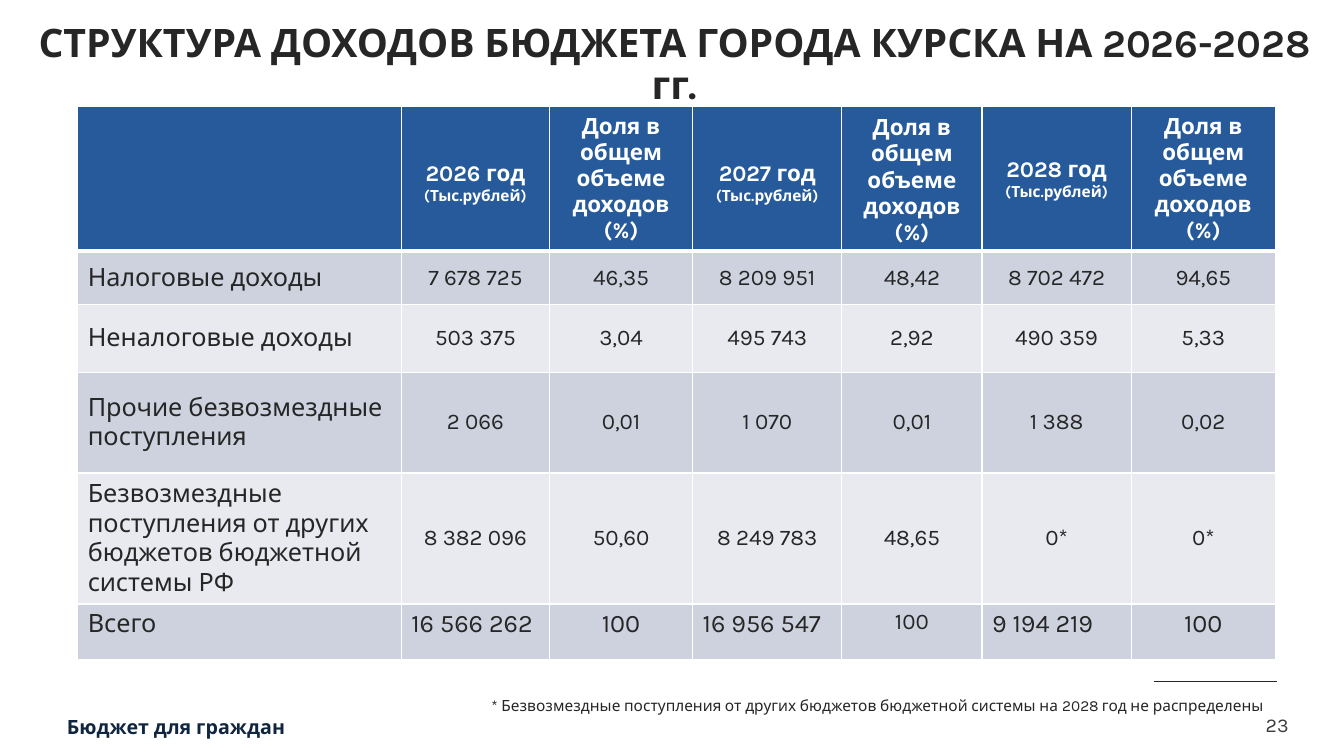
from lxml import etree
from pptx import Presentation
from pptx import util as u
from pptx.dml.color import RGBColor
from pptx.enum import shapes, text
from pptx.oxml import ns

FONT = "Karla"
INK = RGBColor(0x26, 0x26, 0x26)
NAVY = RGBColor(0x10, 0x25, 0x3F)
GREY = RGBColor(0x3C, 0x3C, 0x3C)
WHITE = RGBColor(0xFF, 0xFF, 0xFF)
HEADER_BLUE = RGBColor(0x26, 0x5A, 0x9A)
BANDS = RGBColor(0xCD, 0xD2, 0xDE), RGBColor(0xE8, 0xEA, 0xEF)

WIDTH, HEIGHT = u.Inches(13.33), u.Inches(7.5)
LEFT, CENTER, RIGHT = text.PP_ALIGN.LEFT, text.PP_ALIGN.CENTER, text.PP_ALIGN.RIGHT
TOP, MIDDLE, BOTTOM = text.MSO_ANCHOR.TOP, text.MSO_ANCHOR.MIDDLE, text.MSO_ANCHOR.BOTTOM

COLUMN_SHARES = [3.21, 1.47, 1.42, 1.48, 1.39, 1.48, 1.43]
ROW_SHARES = [1.15, 0.53, 0.67, 1, 0.91, 0.55]
YEARS = ["2026 год ", "2027 год ", "2028 год "]
UNIT = "(Тыс.рублей)"
SHARE_HEADING = "Доля в общем объеме доходов (%)"
INCOME = [
    ["Налоговые доходы", "7 678 725", "46,35", "8 209 951", "48,42", "8 702 472", "94,65"],
    ["Неналоговые доходы", "503 375", "3,04", "495 743", "2,92", "490 359", "5,33"],
    ["Прочие безвозмездные поступления", "2 066", "0,01", "1 070", "0,01", "1 388", "0,02"],
    ["Безвозмездные поступления от других бюджетов бюджетной системы РФ",
     "8 382 096", "50,60", "8 249 783", "48,65", "0*", "0*"],
]
TOTALS = ["Всего", "16 566 262", "100", "16 956 547", "100", "9 194 219", "100"]


def percent_box(left, top, width, height):
    """Turn percentages of the slide into a box in EMU."""
    return (int(WIDTH * left / 100), int(HEIGHT * top / 100),
            int(WIDTH * width / 100), int(HEIGHT * height / 100))


def write(paragraph, words, size=16, color=INK, bold=False, align=LEFT):
    """Append one formatted run to a paragraph."""
    paragraph.alignment = align
    run = paragraph.add_run()
    run.text = words
    run.font.name, run.font.size = FONT, u.Pt(size)
    run.font.bold, run.font.color.rgb = bold, color


def add_label(slide, box, words, anchor=TOP, inset=True, spacing=None, **style):
    """Place a wrapped line of text in the box."""
    frame = slide.shapes.add_textbox(*box).text_frame
    frame.word_wrap, frame.vertical_anchor = True, anchor
    if not inset:
        frame.margin_left = frame.margin_right = frame.margin_top = frame.margin_bottom = 0
    if spacing:
        frame.paragraphs[0].line_spacing = spacing
    write(frame.paragraphs[0], words, **style)


def paint_cell(cell, fill, top_width=1, bottom_width=1):
    """Fill a cell and rule its four sides in white."""
    cell.fill.solid()
    cell.fill.fore_color.rgb = fill
    properties = cell._tc.get_or_add_tcPr()
    sides = {"lnL": 1, "lnR": 1, "lnT": top_width, "lnB": bottom_width}
    for position, (side, points) in enumerate(sides.items()):
        border = etree.Element(ns.qn("a:" + side), w=str(u.Pt(points)))
        solid = etree.SubElement(border, ns.qn("a:solidFill"))
        etree.SubElement(solid, ns.qn("a:srgbClr"), val=str(WHITE))
        properties.insert(position, border)


def fill_header(cells):
    """Write the year and share headings."""
    for column, cell in enumerate(cells):
        paint_cell(cell, HEADER_BLUE, bottom_width=3)
        if column == 0:
            continue
        cell.vertical_anchor = BOTTOM if column == 4 else MIDDLE
        heading = cell.text_frame.paragraphs[0]
        style = dict(color=WHITE, bold=True, align=CENTER)
        if column % 2 == 0:
            write(heading, SHARE_HEADING, **style)
            continue
        write(heading, YEARS[column // 2], **style)
        write(heading, UNIT, size=11, **style)
        if column < 5:
            cell.margin_top = u.Inches(0.13)


def fill_income(cells, values, band, first):
    """Write one source of income on its band."""
    for column, (cell, value) in enumerate(zip(cells, values)):
        paint_cell(cell, band, top_width=3 if first else 1)
        cell.vertical_anchor = MIDDLE
        write(cell.text_frame.paragraphs[0], value,
              size=16 if column else 18, align=CENTER if column else LEFT)


def fill_totals(cells, band):
    """Write the totals row."""
    for column, (cell, value) in enumerate(zip(cells, TOTALS)):
        paint_cell(cell, band)
        cell.vertical_anchor = TOP
        write(cell.text_frame.paragraphs[0], value, size=16 if column == 4 else 18,
              align=CENTER if column and column % 2 == 0 else LEFT)


def add_income_table(slide, box):
    """Build the budget income table in the box."""
    table = slide.shapes.add_table(len(ROW_SHARES), len(COLUMN_SHARES), *box).table
    for column, share in zip(table.columns, COLUMN_SHARES):
        column.width = int(box[2] * share / sum(COLUMN_SHARES))
    for row, share in zip(table.rows, ROW_SHARES):
        row.height = int(box[3] * share / sum(ROW_SHARES))
    header, *income_rows, totals = table.rows
    fill_header(header.cells)
    for index, (row, values) in enumerate(zip(income_rows, INCOME)):
        fill_income(row.cells, values, BANDS[index % 2], first=index == 0)
    fill_totals(totals.cells, BANDS[len(INCOME) % 2])


def add_rule(slide, box):
    """Draw a thin line along the top of the box."""
    left, top, width, _ = box
    rule = slide.shapes.add_connector(shapes.MSO_CONNECTOR.STRAIGHT, left, top, left + width, top)
    rule.line.color.rgb, rule.line.width = INK, u.Pt(0.5)
    etree.SubElement(rule._element.spPr, ns.qn("a:effectLst"))


def build_income_slide(presentation):
    """Lay out the income structure slide."""
    slide = presentation.slides.add_slide(presentation.slide_layouts[6])
    add_label(slide, percent_box(94, 94.27, 1.88, 3.2), "23", anchor=MIDDLE, inset=False,
              size=14, color=GREY, align=RIGHT)
    add_label(slide, percent_box(4.97, 94.53, 89, 3.2), "Бюджет для граждан", inset=False,
              size=14, color=NAVY, bold=True)
    add_label(slide, percent_box(2.1, 3.6, 96.17, 10.13),
              "СТРУКТУРА ДОХОДОВ БЮДЖЕТА ГОРОДА КУРСКА НА 2026-2028 гг.",
              anchor=MIDDLE, spacing=0.9, size=28, bold=True, align=CENTER)
    add_income_table(slide, percent_box(5.78, 14.13, 89.12, 64.13))
    add_label(slide, percent_box(26.33, 91.47, 68.49, 8.53),
              "* Безвозмездные поступления от других бюджетов бюджетной системы "
              "на 2028 год не распределены", size=11, align=RIGHT)
    add_rule(slide, percent_box(85.9, 90.13, 9.15, 0))


def main():
    """Create and save the presentation."""
    presentation = Presentation()
    presentation.slide_width, presentation.slide_height = WIDTH, HEIGHT
    build_income_slide(presentation)
    presentation.save("out.pptx")


if __name__ == "__main__":
    main()
